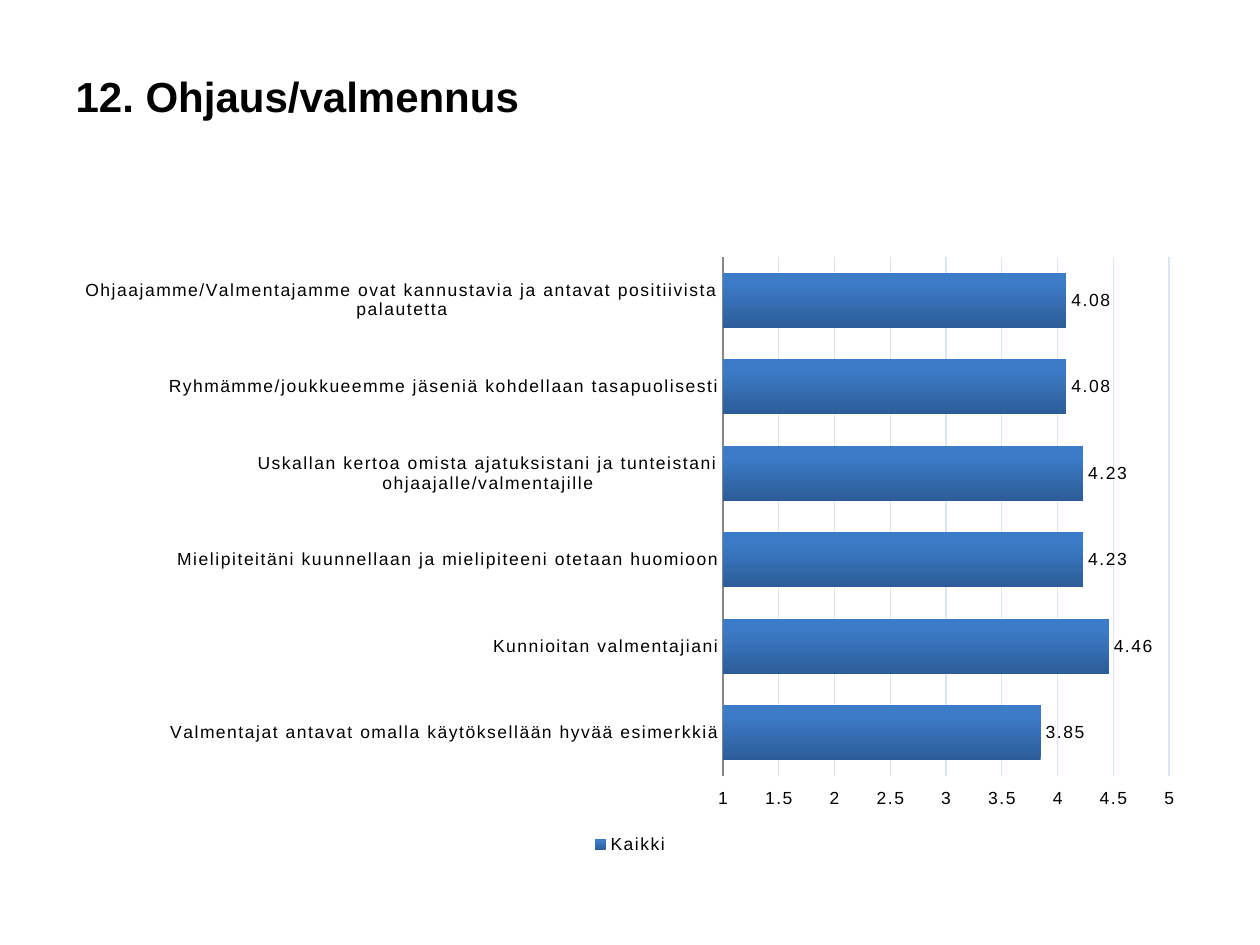
from lxml import etree
from pptx import Presentation
from pptx.chart.data import CategoryChartData
from pptx.dml.color import RGBColor
from pptx.enum.chart import (XL_CHART_TYPE, XL_LABEL_POSITION, XL_LEGEND_POSITION,
                             XL_TICK_LABEL_POSITION, XL_TICK_MARK)
from pptx.enum.text import MSO_ANCHOR, PP_ALIGN
from pptx.oxml.ns import qn
from pptx.util import Pt

BAR_CLUSTERED = XL_CHART_TYPE.BAR_CLUSTERED
LABEL_OUTSIDE = XL_LABEL_POSITION.OUTSIDE_END
LEGEND_BOTTOM = XL_LEGEND_POSITION.BOTTOM
LABELS_HIGH = XL_TICK_LABEL_POSITION.HIGH
NO_TICKS = XL_TICK_MARK.NONE
MIDDLE = MSO_ANCHOR.MIDDLE
LEFT = PP_ALIGN.LEFT

BLACK = RGBColor(0x00, 0x00, 0x00)
BAR_DARK = RGBColor(0x2C, 0x5D, 0x98)
BAR_LIGHT = RGBColor(0x3C, 0x7B, 0xC7)
GRID = RGBColor(0xDC, 0xE6, 0xF2)
AXIS = RGBColor(0x86, 0x86, 0x86)
FONT = "Arial"

TITLE_BOX = (36, 26, 648, 57)
CHART_BOX = (36, 139.7, 648, 351.4)
PLOT_BOX = (377.1, 7.2, 255, 296.6)
LETTER_SPACING = "100"

RATINGS = [
    ("Ohjaajamme/Valmentajamme ovat kannustavia ja antavat positiivista palautetta", 4.08),
    ("Ryhmämme/joukkueemme jäseniä kohdellaan tasapuolisesti", 4.08),
    ("Uskallan kertoa omista ajatuksistani ja tunteistani ohjaajalle/valmentajille", 4.23),
    ("Mielipiteitäni kuunnellaan ja mielipiteeni otetaan huomioon", 4.23),
    ("Kunnioitan valmentajiani", 4.46),
    ("Valmentajat antavat omalla käytöksellään hyvää esimerkkiä", 3.85),
]


def style_font(font, size, bold=False):
    font.name = FONT
    font.size = Pt(size)
    font.bold = bold
    font.color.rgb = BLACK


def place_title(slide, box):
    title = slide.shapes.title
    title.left, title.top, title.width, title.height = map(Pt, box)
    frame = title.text_frame
    frame.text = "12. Ohjaus/valmennus"
    frame.vertical_anchor = MIDDLE
    heading = frame.paragraphs[0]
    heading.alignment = LEFT
    style_font(heading.runs[0].font, 24, bold=True)


def fix_plot_layout(chart, chart_size):
    plot_area = chart.element.find(".//" + qn("c:plotArea"))
    for old_layout in plot_area.findall(qn("c:layout")):
        plot_area.remove(old_layout)
    layout = etree.Element(qn("c:layout"))
    manual = etree.SubElement(layout, qn("c:manualLayout"))
    settings = [("layoutTarget", "inner"), ("xMode", "edge"), ("yMode", "edge")]
    shares = [length / whole for length, whole in zip(PLOT_BOX, chart_size * 2)]
    for tag, value in settings + list(zip("xywh", shares)):
        etree.SubElement(manual, qn("c:" + tag)).set("val", str(value))
    plot_area.insert(0, layout)


def style_axes(chart):
    statements, scale = chart.category_axis, chart.value_axis
    for axis in (statements, scale):
        axis.major_tick_mark = axis.minor_tick_mark = NO_TICKS
        style_font(axis.tick_labels.font, 10)
    statements.reverse_order = True
    statements.format.line.color.rgb = AXIS
    scale.tick_label_position = LABELS_HIGH
    scale.minimum_scale, scale.maximum_scale = 1, 5
    scale.major_unit = 0.5
    scale.format.line.fill.background()
    scale.tick_labels.number_format = "General"
    scale.tick_labels.number_format_is_linked = False
    grid_line = scale.major_gridlines.format.line
    grid_line.color.rgb = GRID
    grid_line.width = Pt(0.75)


def style_bars(plot):
    plot.gap_width = 58
    plot.vary_by_categories = False
    fill = plot.series[0].format.fill
    fill.gradient()
    fill.gradient_angle = 90
    for stop, color, position in zip(fill.gradient_stops, (BAR_DARK, BAR_LIGHT), (0, 0.8)):
        stop.color.rgb = color
        stop.position = position
    plot.has_data_labels = True
    labels = plot.data_labels
    labels.show_value = True
    labels.position = LABEL_OUTSIDE
    labels.number_format = "0.00"
    labels.number_format_is_linked = False
    style_font(labels.font, 10)


def place_ratings(slide, box):
    data = CategoryChartData()
    data.categories = [statement for statement, _ in RATINGS]
    data.add_series("Kaikki", [rating for _, rating in RATINGS])
    chart = slide.shapes.add_chart(BAR_CLUSTERED, *map(Pt, box), data).chart
    chart.has_title = False
    style_font(chart.font, 10)
    style_axes(chart)
    style_bars(chart.plots[0])
    chart.has_legend = True
    chart.legend.position = LEGEND_BOTTOM
    chart.legend.include_in_layout = False
    style_font(chart.legend.font, 10)
    fix_plot_layout(chart, box[2:])
    for properties in chart.element.iter(qn("a:defRPr")):
        properties.set("spc", LETTER_SPACING)


def main():
    deck = Presentation()
    deck.slide_width, deck.slide_height = Pt(720), Pt(540)
    slide = deck.slides.add_slide(deck.slide_layouts[5])
    place_title(slide, TITLE_BOX)
    place_ratings(slide, CHART_BOX)
    deck.save("out.pptx")


if __name__ == "__main__":
    main()
